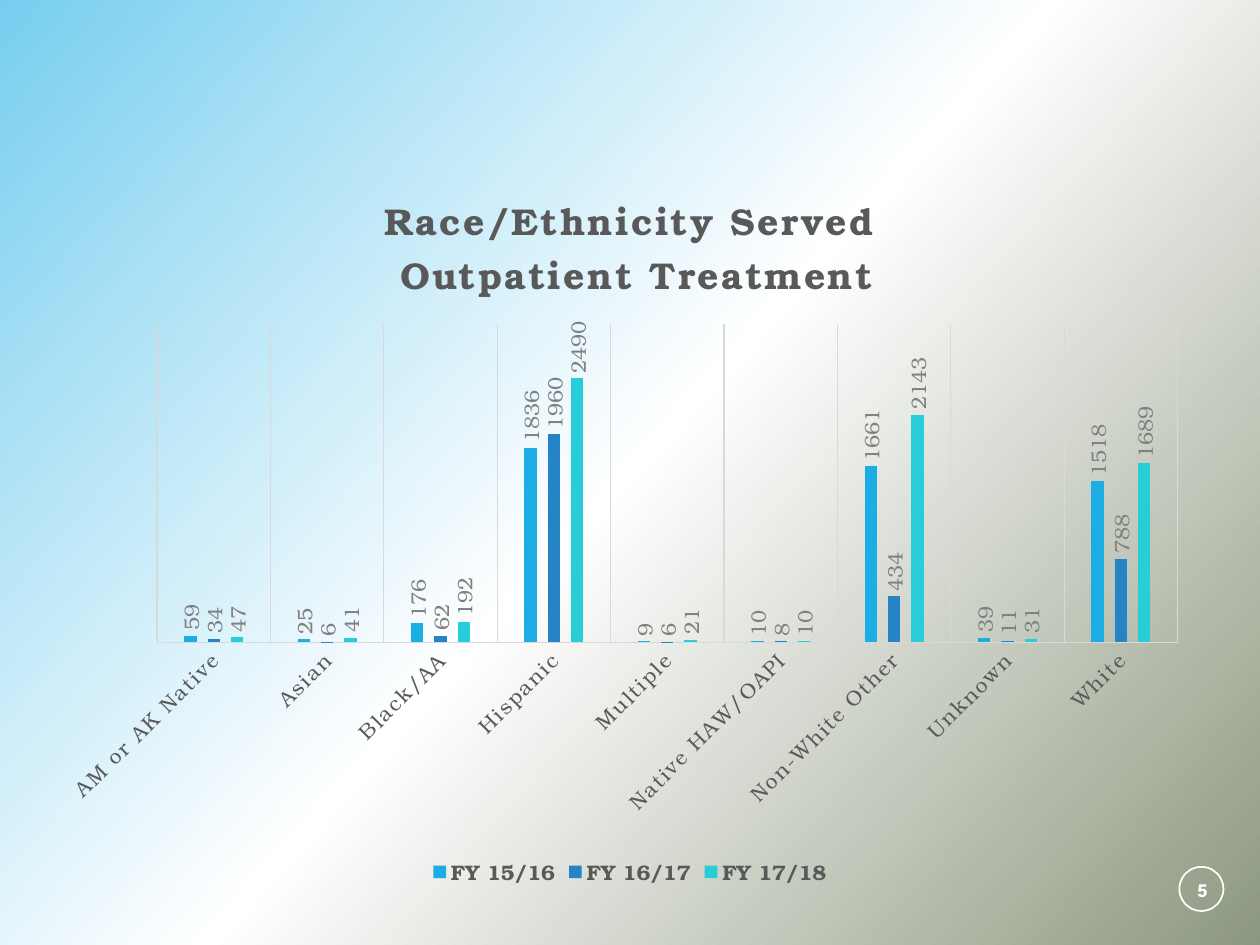
from dataclasses import dataclass

from lxml import etree
from pptx import Presentation
from pptx.chart.data import CategoryChartData
from pptx.dml.color import RGBColor
from pptx.enum import chart as ec, shapes, text
from pptx.oxml import parse_xml
from pptx.oxml.ns import nsdecls, qn
from pptx.util import Pt

WHITE = RGBColor(0xFF, 0xFF, 0xFF)
SKY = RGBColor(0x77, 0xCE, 0xEF)
SAGE = RGBColor(0x8D, 0x98, 0x80)
INK = RGBColor(0x59, 0x59, 0x59)
LABEL = RGBColor(0x80, 0x80, 0x80)
RULE = RGBColor(0xD9, 0xD9, 0xD9)
SERIF = "TeX Gyre Bonum"
SANS = "League Spartan"


@dataclass
class Year:
    name: str
    color: RGBColor
    values: tuple[int, ...]


GROUPS = ("AM or AK Native", "Asian", "Black/AA", "Hispanic", "Multiple",
          "Native HAW/OAPI", "Non-White Other", "Unknown", "White")
YEARS = (
    Year("FY 15/16", RGBColor(0x1C, 0xAD, 0xE4), (59, 25, 176, 1836, 9, 10, 1661, 39, 1518)),
    Year("FY 16/17", RGBColor(0x26, 0x83, 0xC6), (34, 6, 62, 1960, 6, 8, 434, 11, 788)),
    Year("FY 17/18", RGBColor(0x27, 0xCE, 0xD7), (47, 41, 192, 2490, 21, 10, 2143, 31, 1689)),
)
TITLE = ("Race/Ethnicity Served ", "Outpatient Treatment")


def set_font(font, size: float, color: RGBColor, name: str = SERIF, bold: bool = False) -> None:
    font.size = Pt(size)
    font.name = name
    font.bold = bold
    font.color.rgb = color


def set_rule(line) -> None:
    line.color.rgb = RULE
    line.width = Pt(0.75)


def set_layout(parent, index: int, **values) -> None:
    old = parent.find(qn("c:layout"))
    if old is not None:
        parent.remove(old)
    layout = parse_xml(f"<c:layout {nsdecls('c')}><c:manualLayout/></c:layout>")
    for tag, val in values.items():
        etree.SubElement(layout[0], qn(f"c:{tag}")).set("val", str(val))
    parent.insert(index, layout)


def rotate(element, degrees: int) -> None:
    body = element.find(qn("c:txPr")).find(qn("a:bodyPr"))
    body.set("rot", str(degrees * 60000))
    body.set("vert", "horz")


def paint_background(s) -> None:
    fill = s.background.fill
    fill.gradient()
    fill.gradient_angle = 318
    stops = s.element.find(f".//{qn('a:gsLst')}")
    for stop in list(stops):
        stops.remove(stop)
    for pos, color in ((0, SKY), (50, WHITE), (100, SAGE)):
        stops.append(parse_xml(
            f'<a:gs {nsdecls("a")} pos="{pos * 1000}"><a:srgbClr val="{color}"/></a:gs>'))


def add_title(chart) -> None:
    chart.has_title = True
    tf = chart.chart_title.text_frame
    for i, line in enumerate(TITLE):
        p = tf.paragraphs[0] if i == 0 else tf.add_paragraph()
        p.alignment = text.PP_ALIGN.CENTER
        r = p.add_run()
        r.text = line
        set_font(r.font, 21.3, INK, bold=True)
        r.font._element.set("spc", "150")
    chart.chart_title.include_in_layout = False
    set_layout(chart.chart_title._element, 1, xMode="edge", yMode="edge", x=0.28, y=0.04)


def style_axes(chart) -> None:
    cat, val = chart.category_axis, chart.value_axis
    cat.major_tick_mark = cat.minor_tick_mark = ec.XL_TICK_MARK.NONE
    cat.has_major_gridlines = True
    set_rule(cat.format.line)
    set_rule(cat.major_gridlines.format.line)
    set_font(cat.tick_labels.font, 12, INK)
    cat.tick_labels.font._element.set("spc", "100")
    rotate(cat._element, -45)
    val.visible = False
    val.has_major_gridlines = False
    val.minimum_scale, val.maximum_scale = 0, 3000


def style_series(ser, year: Year) -> None:
    ser.format.fill.solid()
    ser.format.fill.fore_color.rgb = year.color
    labels = ser.data_labels
    labels.show_value = True
    labels.position = ec.XL_LABEL_POSITION.OUTSIDE_END
    set_font(labels.font, 12, LABEL)
    rotate(labels._element, -90)


def add_chart(s) -> None:
    data = CategoryChartData()
    data.categories = GROUPS
    for year in YEARS:
        data.add_series(year.name, year.values)
    chart = s.shapes.add_chart(ec.XL_CHART_TYPE.COLUMN_CLUSTERED,
                               Pt(36), Pt(90), Pt(648), Pt(419.76), data).chart
    set_font(chart.font, 10, INK)
    add_title(chart)
    style_axes(chart)
    plot = chart.plots[0]
    plot.vary_by_categories = False
    plot.gap_width, plot.overlap = 444, -90
    for ser, year in zip(plot.series, YEARS):
        style_series(ser, year)
    chart.has_legend = True
    chart.legend.position = ec.XL_LEGEND_POSITION.BOTTOM
    chart.legend.include_in_layout = False
    set_font(chart.legend.font, 12, INK, bold=True)
    set_layout(chart._chartSpace.find(f".//{qn('c:plotArea')}"), 0, layoutTarget="inner",
               xMode="edge", yMode="edge", x=0.083, y=0.227, w=0.9, h=0.433)


def add_badge(s) -> None:
    sp = s.shapes.add_shape(shapes.MSO_SHAPE.OVAL, Pt(673.92), Pt(495.36), Pt(25.2), Pt(25.2))
    sp.shadow.inherit = False
    sp.fill.background()
    sp.line.color.rgb = WHITE
    sp.line.width = Pt(1)


def add_page_number(s) -> None:
    tf = s.shapes.add_textbox(Pt(668.16), Pt(493.92), Pt(38.16), Pt(28.8)).text_frame
    tf.word_wrap = True
    tf.vertical_anchor = text.MSO_ANCHOR.MIDDLE
    p = tf.paragraphs[0]
    p.alignment = text.PP_ALIGN.CENTER
    r = p.add_run()
    r.text = "5"
    set_font(r.font, 11, WHITE, SANS, bold=True)
    r.font._element.set("spc", "-70")


def main() -> None:
    prs = Presentation()
    prs.slide_width, prs.slide_height = Pt(720), Pt(540)
    s = prs.slides.add_slide(prs.slide_layouts[6])
    paint_background(s)
    add_badge(s)
    add_chart(s)
    add_page_number(s)
    prs.save("out.pptx")


if __name__ == "__main__":
    main()
